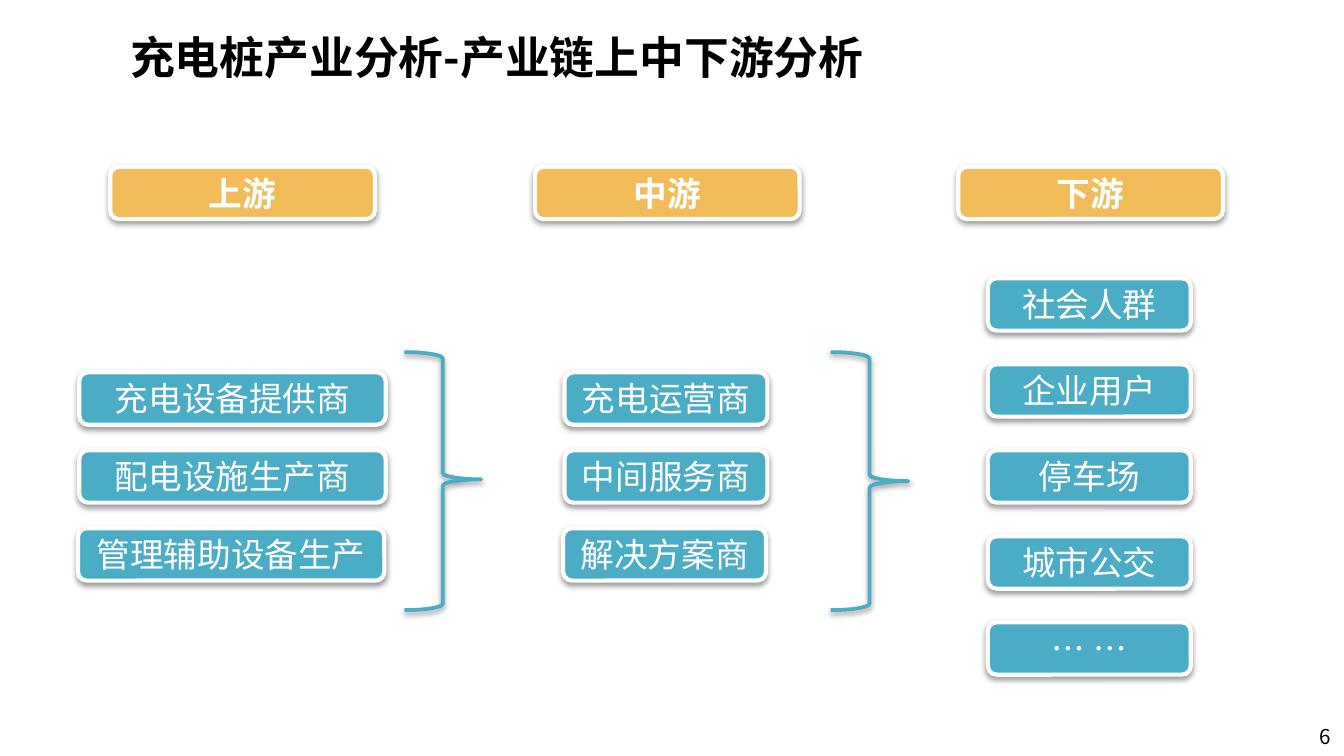
from dataclasses import dataclass

from lxml.etree import SubElement
from pptx import Presentation
from pptx.dml.color import RGBColor
from pptx.enum.shapes import MSO_SHAPE as Shape
from pptx.enum.text import MSO_ANCHOR as Anchor, PP_ALIGN as Align
from pptx.oxml.ns import qn
from pptx.util import Inches, Pt

FONT = "Noto Sans CJK SC"
BLACK = RGBColor(0x00, 0x00, 0x00)
WHITE = RGBColor(0xFF, 0xFF, 0xFF)
ORANGE = RGBColor(0xF3, 0xBC, 0x5A)
TEAL = RGBColor(0x4B, 0xAC, 0xC6)
SLIDE_WIDTH = 10
SLIDE_HEIGHT = SLIDE_WIDTH * 9 / 16
BOX_HEIGHT = 0.39
HEADER_TOP = 1.24
HEADER_WIDTH = 1.97
BRACE_TOP = 2.62
BRACE_HEIGHT = 1.92


@dataclass(frozen=True)
class Stage:
    name: str
    header_left: float
    left: float
    top: float
    width: float
    pitch: float
    members: tuple[str, ...]
    last_shift: float = 0


@dataclass(frozen=True)
class Brace:
    left: float
    width: float
    point: float


STAGES = (
    Stage("上游", 0.82, 0.59, 2.77, 2.28, 0.58,
          ("充电设备提供商", "配电设施生产商", "管理辅助设备生产"), -0.01),
    Stage("中游", 3.98, 4.2, 2.77, 1.51, 0.58,
          ("充电运营商", "中间服务商", "解决方案商"), -0.01),
    Stage("下游", 7.13, 7.35, 2.07, 1.51, 0.64,
          ("社会人群", "企业用户", "停车场", "城市公交", "… …")),
)
BRACES = (Brace(3.01, 0.57, 0.493), Brace(6.18, 0.58, 0.5))


def add_run(p, text: str, size: float, color: RGBColor, bold: bool = False) -> None:
    r = p.add_run()
    r.text = text
    r.font.size = Pt(size)
    r.font.bold = bold
    r.font.color.rgb = color
    r.font.name = FONT
    SubElement(r.font._element, qn("a:ea"), typeface=FONT)


def add_shadow(sp) -> None:
    sp.shadow.inherit = False
    effects = sp._element.spPr.find(qn("a:effectLst"))
    shadow = SubElement(effects, qn("a:outerShdw"), blurRad=str(Pt(3.1)),
                        dist=str(Pt(1.6)), dir="5400000", rotWithShape="0")
    color = SubElement(shadow, qn("a:srgbClr"), val=str(BLACK))
    SubElement(color, qn("a:alpha"), val="38000")


def add_box(slide, left: float, top: float, width: float, text: str,
            fill: RGBColor, bold: bool = False) -> None:
    sp = slide.shapes.add_shape(Shape.ROUNDED_RECTANGLE, Inches(left), Inches(top),
                                Inches(width), Inches(BOX_HEIGHT))
    sp.fill.solid()
    sp.fill.fore_color.rgb = fill
    sp.line.color.rgb = WHITE
    sp.line.width = Pt(2.25)
    add_shadow(sp)
    tf = sp.text_frame
    tf.word_wrap = False
    tf.vertical_anchor = Anchor.MIDDLE
    p = tf.paragraphs[0]
    p.alignment = Align.CENTER
    add_run(p, text, 18, WHITE, bold)


def add_stage(slide, stage: Stage) -> None:
    add_box(slide, stage.header_left, HEADER_TOP, HEADER_WIDTH, stage.name, ORANGE, True)
    last = len(stage.members) - 1
    for i, member in enumerate(stage.members):
        left = stage.left + (stage.last_shift if i == last else 0)
        add_box(slide, left, stage.top + i * stage.pitch, stage.width, member, TEAL)


def add_brace(slide, brace: Brace) -> None:
    sp = slide.shapes.add_shape(Shape.RIGHT_BRACE, Inches(brace.left), Inches(BRACE_TOP),
                                Inches(brace.width), Inches(BRACE_HEIGHT))
    sp.adjustments[0] = 0.083
    sp.adjustments[1] = brace.point
    sp.fill.background()
    sp.line.color.rgb = TEAL
    sp.line.width = Pt(2)
    add_shadow(sp)


def add_text(slide, left: float, top: float, width: float, height: float, text: str,
             size: float, bold: bool = False, align: Align = Align.LEFT,
             anchor: Anchor = Anchor.TOP) -> None:
    sp = slide.shapes.add_textbox(Inches(left), Inches(top), Inches(width), Inches(height))
    tf = sp.text_frame
    tf.word_wrap = True
    tf.vertical_anchor = anchor
    p = tf.paragraphs[0]
    p.alignment = align
    add_run(p, text, size, BLACK, bold)


def main() -> None:
    prs = Presentation()
    prs.slide_width = Inches(SLIDE_WIDTH)
    prs.slide_height = Inches(SLIDE_HEIGHT)
    slide = prs.slides.add_slide(prs.slide_layouts[6])
    add_text(slide, 0.87, 0.17, 7.87, 0.52, "充电桩产业分析-产业链上中下游分析", 24, bold=True)
    add_text(slide, 7.28, 5.33, 2.72, 0.3, "6", 11, align=Align.RIGHT, anchor=Anchor.MIDDLE)
    for stage in STAGES:
        add_stage(slide, stage)
    for brace in BRACES:
        add_brace(slide, brace)
    prs.save("out.pptx")


if __name__ == "__main__":
    main()
